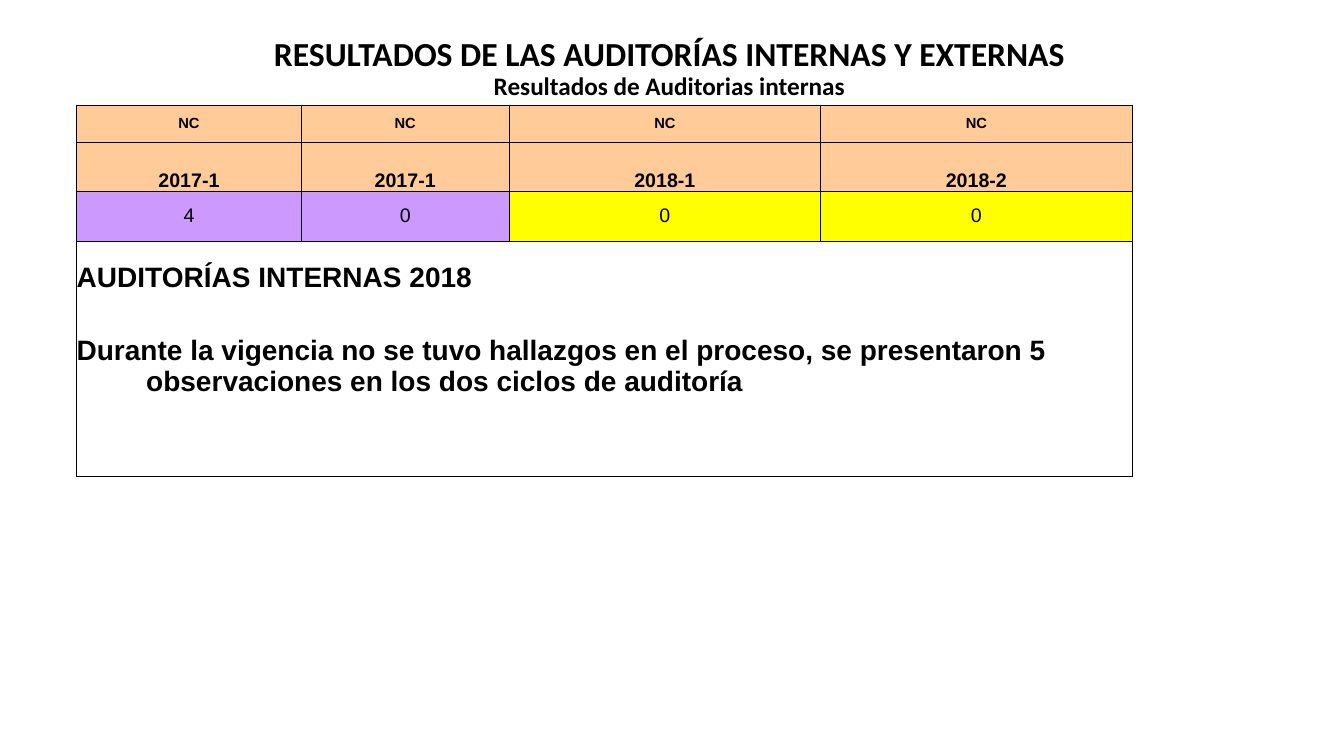
from lxml import etree
from pptx import Presentation
from pptx.dml.color import RGBColor
from pptx.enum.text import MSO_ANCHOR, PP_ALIGN
from pptx.oxml.ns import qn
from pptx.util import Inches, Pt

MID, BOT, TOP = MSO_ANCHOR.MIDDLE, MSO_ANCHOR.BOTTOM, MSO_ANCHOR.TOP
LEFT, MIDDLE = PP_ALIGN.LEFT, PP_ALIGN.CENTER
BLACK = RGBColor(0, 0, 0)
WHITE = RGBColor(0xFF, 0xFF, 0xFF)
PEACH = RGBColor(0xFF, 0xCC, 0x99)
LILAC = RGBColor(0xCC, 0x99, 0xFF)
YELLOW = RGBColor(0xFF, 0xFF, 0x00)

# Content
TITLES = [
    ("RESULTADOS DE LAS AUDITORÍAS INTERNAS Y EXTERNAS", 24),
    ("Resultados de Auditorias internas", 18),
]
ROWS = [
    (["NC"] * 4, [PEACH] * 4, MID, {"size": Pt(10.5), "bold": True}),
    (["2017-1", "2017-1", "2018-1", "2018-2"], [PEACH] * 4, BOT,
     {"size": Pt(14), "bold": True}),
    (["4", "0", "0", "0"], [LILAC] * 2 + [YELLOW] * 2, MID,
     {"size": Pt(14), "bold": False}),
]
NOTES = [
    "AUDITORÍAS INTERNAS 2018",
    "Durante la vigencia no se tuvo hallazgos en el proceso, "
    "se presentaron 5 observaciones en los dos ciclos de auditoría",
]
NOTE_FONT = {"size": Pt(20), "bold": True}
WIDTHS = [2.23, 2.06, 3.09, 3.09]
HEIGHTS = [0.37, 0.49, 0.49, 2.34]


def style(font, **look):
    font.color.rgb = BLACK
    for key, value in look.items():
        setattr(font, key, value)


def border(cell):
    props = cell._tc.get_or_add_tcPr()
    for side in ("lnL", "lnR", "lnT", "lnB"):
        line = etree.SubElement(props, qn("a:" + side), w=str(Pt(0.5)))
        paint = etree.SubElement(line, qn("a:solidFill"))
        etree.SubElement(paint, qn("a:srgbClr"), val=str(BLACK))


def format_cell(cell, fill, anchor, top=0):
    border(cell)
    cell.fill.solid()
    cell.fill.fore_color.rgb = fill
    cell.vertical_anchor = anchor
    cell.margin_left = cell.margin_right = cell.margin_bottom = 0
    cell.margin_top = Inches(top)


def write(para, text, align, look):
    para.alignment = align
    run = para.add_run()
    run.text = text
    style(run.font, name="Arial", **look)


deck = Presentation()
deck.slide_width, deck.slide_height = Inches(13.33), Inches(7.5)
slide = deck.slides.add_slide(deck.slide_layouts[6])

# Heading
box = slide.shapes.add_textbox(Inches(2.14), Inches(0.69), Inches(9), Inches(0.36))
frame = box.text_frame
frame.word_wrap = True
frame.vertical_anchor = BOT
head = frame.paragraphs[0]
head.alignment = MIDDLE
head.line_spacing = 0.9
for i, (text, size) in enumerate(TITLES):
    if i:
        head.add_line_break()
    run = head.add_run()
    run.text = text
    style(run.font, name="Calibri", size=Pt(size), bold=True)

# Table grid
table = slide.shapes.add_table(
    len(HEIGHTS), len(WIDTHS), Inches(0.76), Inches(1.04),
    Inches(sum(WIDTHS)), Inches(sum(HEIGHTS))).table
for col, width in zip(table.columns, WIDTHS):
    col.width = Inches(width)
for row, height in zip(table.rows, HEIGHTS):
    row.height = Inches(height)

# Audit counts
for r, (texts, fills, anchor, look) in enumerate(ROWS):
    for c, (text, fill) in enumerate(zip(texts, fills)):
        cell = table.cell(r, c)
        format_cell(cell, fill, anchor)
        write(cell.text_frame.paragraphs[0], text, MIDDLE, look)

# Merged notes row
last = len(ROWS)
for c in range(len(WIDTHS)):
    format_cell(table.cell(last, c), WHITE, TOP, 0.21)
note = table.cell(last, 0)
note.merge(table.cell(last, len(WIDTHS) - 1))
for i, text in enumerate(NOTES):
    para = note.text_frame.add_paragraph() if i else note.text_frame.paragraphs[0]
    props = para._p.get_or_add_pPr()
    props.set("marL", str(Inches(0.69)))
    props.set("indent", str(-Inches(0.69)))
    if i:
        para.space_before = Pt(30)
    write(para, text, LEFT, NOTE_FONT)

deck.save("out.pptx")
